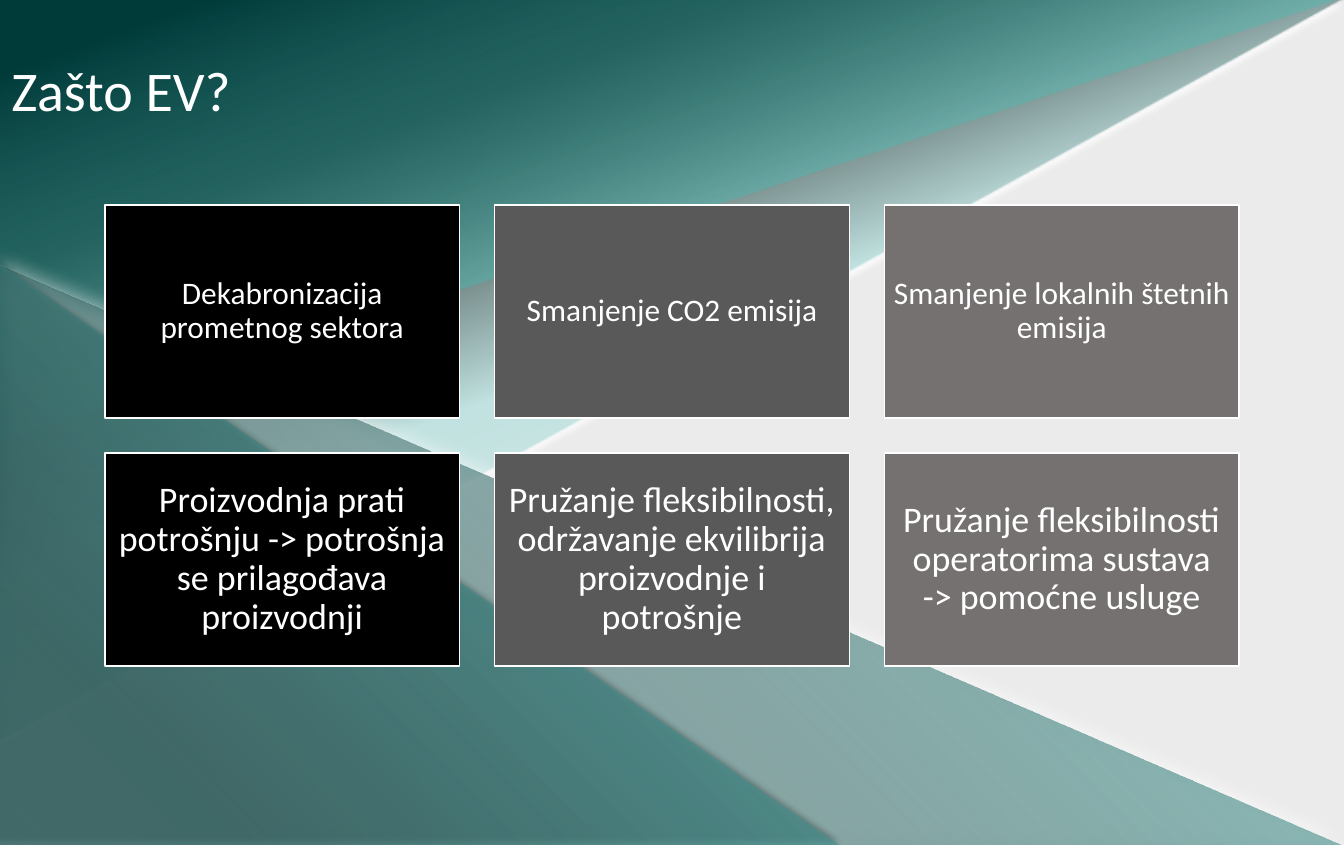
from dataclasses import dataclass

from lxml import etree
from pptx import Presentation
from pptx.dml.color import RGBColor
from pptx.enum.shapes import MSO_SHAPE
from pptx.enum.text import MSO_ANCHOR, MSO_AUTO_SIZE, PP_ALIGN
from pptx.oxml.ns import qn
from pptx.util import Pt

TRIANGLE, RECTANGLE = MSO_SHAPE.RIGHT_TRIANGLE, MSO_SHAPE.RECTANGLE
MIDDLE, NO_FIT = MSO_ANCHOR.MIDDLE, MSO_AUTO_SIZE.NONE
LEFT, CENTER = PP_ALIGN.LEFT, PP_ALIGN.CENTER
PX = 9144
TITLE_ONLY = 5


@dataclass(frozen=True)
class Theme:
    font: str = "Calibri"
    text: str = "FFFFFF"
    ground: str = "EBEBEB"
    outline: str = "FFFFFF"
    cards: tuple = ("000000", "595959", "767171")
    title_size: float = 35.8
    row_sizes: tuple = (20, 23)


THEME = Theme()

RAYS = [
    dict(box=(0, -1, 1193, 658), flipped=True, angle=290,
         stops=[(22, "050D0D", 89), (47, "C1E2E0", 100),
                (75, "C1E2E0", 60), (95, "C1E2E0", 100)],
         shadow=("FFFFFF", 100, 4, 4, 90)),
    dict(box=(0, -2, 1193, 394), flipped=True, angle=290,
         stops=[(8, "003B3A", 100), (50, "4DBBB3", 44)], shadow=None),
    dict(box=(0, 235, 1193, 515), flipped=False, angle=315,
         stops=[(0, "153836", 41), (100, "99D7D4", 100)],
         shadow=("FFFFFF", 100, 14, 0, 78)),
    dict(box=(0, 235, 748, 516), flipped=False, angle=315,
         stops=[(18, "245E5D", 59), (100, "6CC6C2", 80)],
         shadow=("000000", 43, 4, 4, 220)),
]

REASONS = [
    ["Dekabronizacija prometnog sektora",
     "Smanjenje CO2 emisija",
     "Smanjenje lokalnih štetnih emisija"],
    ["Proizvodnja prati potrošnju -> potrošnja se prilagođava proizvodnji",
     "Pružanje fleksibilnosti, održavanje ekvilibrija proizvodnje i potrošnje",
     "Pružanje fleksibilnosti operatorima sustava -> pomoćne usluge"],
]


def emu(box):
    return [length * PX for length in box]


def apply(target, values):
    for name, value in values.items():
        setattr(target, name, value)


def add_color(parent, color, alpha):
    node = etree.SubElement(parent, qn("a:srgbClr"), val=color)
    etree.SubElement(node, qn("a:alpha"), val=str(alpha * 1000))


def write_text(shape, text, size, align, inset):
    frame = shape.text_frame
    apply(frame, dict(text=text, word_wrap=True, auto_size=NO_FIT,
                      vertical_anchor=MIDDLE,
                      margin_left=inset * PX, margin_right=inset * PX,
                      margin_top=inset * PX, margin_bottom=inset * PX))
    para = frame.paragraphs[0]
    apply(para, dict(alignment=align, line_spacing=0.9))
    apply(para.font, dict(name=THEME.font, size=Pt(size)))
    para.font.color.rgb = RGBColor.from_string(THEME.text)


def set_gradient(shape, stops, angle):
    shape.fill.background()
    properties = shape._element.spPr
    gradient = etree.Element(qn("a:gradFill"), rotWithShape="1")
    stop_list = etree.SubElement(gradient, qn("a:gsLst"))
    for position, color, alpha in stops:
        stop = etree.SubElement(stop_list, qn("a:gs"), pos=str(position * 1000))
        add_color(stop, color, alpha)
    etree.SubElement(gradient, qn("a:lin"), ang=str(angle * 60000), scaled="0")
    properties.replace(properties.find(qn("a:noFill")), gradient)


def set_shadow(shape, color, alpha, blur, distance, direction):
    effects = shape._element.spPr.find(qn("a:effectLst"))
    shadow = etree.SubElement(
        effects, qn("a:outerShdw"), blurRad=str(Pt(blur)), dist=str(Pt(distance)),
        dir=str(direction * 60000), algn="ctr", rotWithShape="0")
    add_color(shadow, color, alpha)


def add_ray(page, box, flipped, angle, stops, shadow):
    ray = page.shapes.add_shape(TRIANGLE, *emu(box))
    if flipped:
        ray.rotation = 180
        ray._element.spPr.find(qn("a:xfrm")).set("flipH", "1")
    set_gradient(ray, stops, angle)
    ray.line.fill.background()
    ray.shadow.inherit = False
    if shadow:
        set_shadow(ray, *shadow)


def add_background(page):
    fill = page.background.fill
    fill.solid()
    fill.fore_color.rgb = RGBColor.from_string(THEME.ground)
    for ray in RAYS:
        add_ray(page, **ray)


def add_title(page, box, text):
    title = page.shapes.title
    apply(title, dict(zip(("left", "top", "width", "height"), emu(box))))
    write_text(title, text, THEME.title_size, LEFT, 10)
    title._element.getparent().append(title._element)


def add_card(page, box, text, color, size, inset):
    card = page.shapes.add_shape(RECTANGLE, *emu(box))
    card.shadow.inherit = False
    card.fill.solid()
    card.fill.fore_color.rgb = RGBColor.from_string(color)
    card.line.color.rgb = RGBColor.from_string(THEME.outline)
    card.line.width = Pt(1)
    write_text(card, text, size, CENTER, inset)


def add_reasons(page, box, gap):
    left, top, width, height = box
    card_width = (width - 2 * gap) // 3
    card_height = (height - gap) // 2
    for row, (texts, size, inset) in enumerate(zip(REASONS, THEME.row_sizes, (8, 10))):
        for column, (text, color) in enumerate(zip(texts, THEME.cards)):
            place = (left + column * (card_width + gap),
                     top + row * (card_height + gap), card_width, card_height)
            add_card(page, place, text, color, size, inset)


def main():
    deck = Presentation()
    apply(deck, dict(slide_width=1193 * PX, slide_height=750 * PX))
    page = deck.slides.add_slide(deck.slide_layouts[TITLE_ONLY])
    add_background(page)
    add_title(page, (0, 40, 739, 85), "Zašto EV?")
    add_reasons(page, (93, 182, 1007, 410), 31)
    deck.save("out.pptx")


if __name__ == "__main__":
    main()
